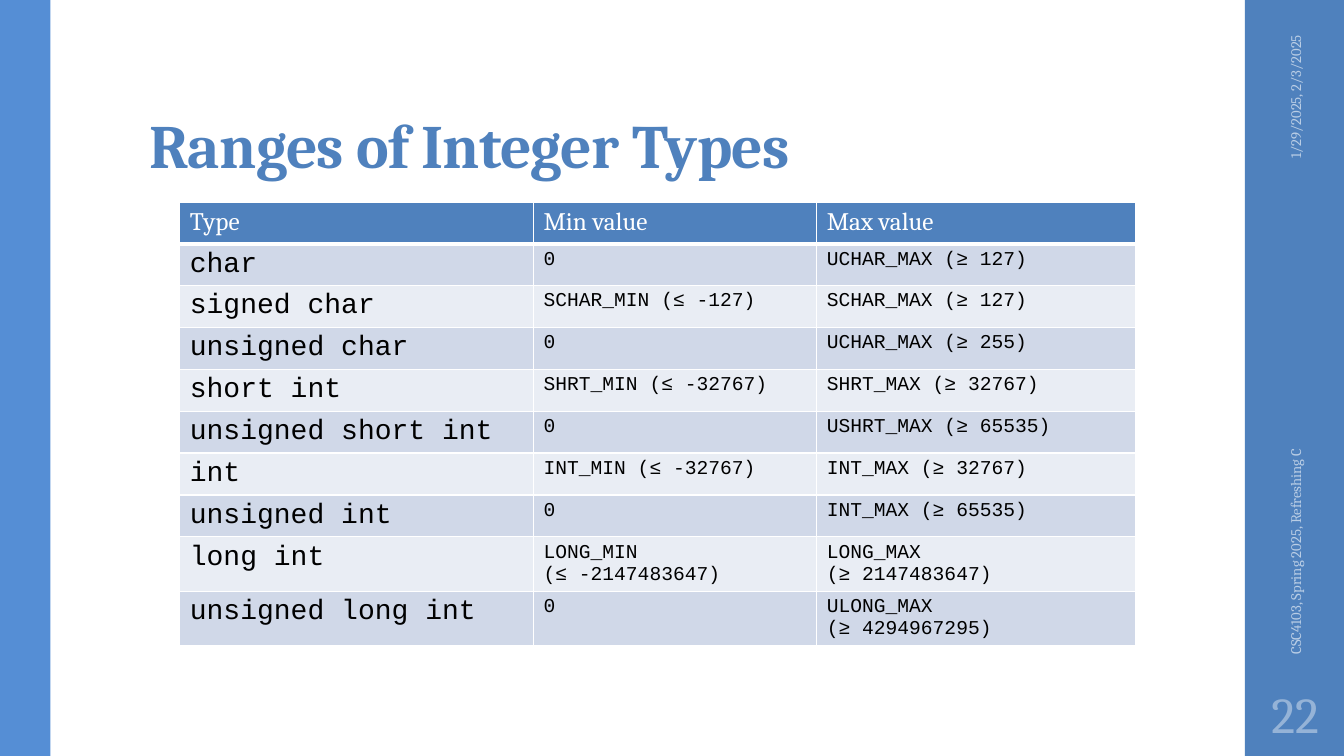
"""Build the slide on the ranges of C integer types."""
from dataclasses import dataclass

from lxml.etree import SubElement
from pptx import Presentation
from pptx.dml.color import RGBColor as RGB
from pptx.enum.shapes import MSO_SHAPE as SHAPE
from pptx.enum.text import MSO_ANCHOR as ANCHOR, MSO_AUTO_SIZE as AUTO, PP_ALIGN as ALIGN
from pptx.oxml import parse_xml
from pptx.oxml.ns import nsdecls, qn
from pptx.util import Pt

COLORS = {
    "accent": "4F81BD", "left_bar": "558ED5", "white": "FFFFFF", "black": "000000",
    "band_dark": "D0D8E8", "band_light": "E9EDF4", "footer": "B9CDE5", "number": "95B3D7",
}
FORMATS = {
    "title": {"name": "Cambria", "size": Pt(44), "bold": True},
    "header": {"name": "Cambria", "size": Pt(18), "bold": False},
    "type": {"name": "Courier New", "size": Pt(20), "bold": False},
    "value": {"name": "Courier New", "size": Pt(14), "bold": False},
    "footer": {"name": "Cambria", "size": Pt(10.5)},
    "number": {"name": "Cambria", "size": Pt(36)},
}
COL_WIDTHS = (252.7, 202.3, 227.8)
ROW_HEIGHT = 29.2
ROWS = (
    ("Type", "Min value", "Max value"),
    ("char", "0", "UCHAR_MAX (≥ 127)"),
    ("signed char", "SCHAR_MIN (≤ -127)", "SCHAR_MAX (≥ 127)"),
    ("unsigned char", "0", "UCHAR_MAX (≥ 255)"),
    ("short int", "SHRT_MIN (≤ -32767)", "SHRT_MAX (≥ 32767)"),
    ("unsigned short int", "0", "USHRT_MAX (≥ 65535)"),
    ("int", "INT_MIN (≤ -32767)", "INT_MAX (≥ 32767)"),
    ("unsigned int", "0", "INT_MAX (≥ 65535)"),
    ("long int", "LONG_MIN\n(≤ -2147483647)", "LONG_MAX\n(≥ 2147483647)"),
    ("unsigned long int", "0", "ULONG_MAX\n(≥ 4294967295)"),
)


@dataclass(frozen=True)
class Bar:
    left: float
    width: float
    color: str


@dataclass(frozen=True)
class Label:
    text: str
    box: tuple[float, float, float, float]
    style: str
    align: ALIGN
    rotation: float = 0
    inset: float = 7.2


BARS = (Bar(889.2, 72, "accent"), Bar(0, 36, "left_bar"))
LABELS = (
    Label("CSC4103, Spring 2025, Refreshing C", (784.1, 319, 282.2, 28.8), "footer", ALIGN.LEFT, 270),
    Label("22", (889.2, 486, 72, 46.8), "number", ALIGN.CENTER, inset=3.6),
    Label("1/29/2025, 2/3/2025", (850.3, 78.5, 149.8, 28.8), "footer", ALIGN.RIGHT, 270),
)


def color(name: str) -> RGB:
    return RGB.from_string(COLORS[name])


def write(tf, text: str, style: str, ink: str, align: ALIGN = ALIGN.LEFT) -> None:
    tf.text = text
    for p in tf.paragraphs:
        p.alignment = align
        for r in p.runs:
            for key, value in FORMATS[style].items():
                setattr(r.font, key, value)
            r.font.color.rgb = color(ink)


def add_bar(s, bar: Bar) -> None:
    sp = s.shapes.add_shape(SHAPE.RECTANGLE, Pt(bar.left), 0, Pt(bar.width), Pt(540))
    sp.shadow.inherit = False
    sp.fill.solid()
    sp.fill.fore_color.rgb = color(bar.color)
    sp.line.fill.background()


def add_title(s, text: str) -> None:
    sp = s.shapes.title
    place = {"left": Pt(99.4), "top": Pt(23), "width": Pt(763.2), "height": Pt(110.2)}
    for key, value in place.items():
        setattr(sp, key, value)
    tf = sp.text_frame
    frame = {"vertical_anchor": ANCHOR.BOTTOM, "auto_size": AUTO.NONE, "word_wrap": True,
             "margin_left": Pt(7.2), "margin_right": Pt(7.2),
             "margin_top": Pt(2.2), "margin_bottom": Pt(3.6)}
    for key, value in frame.items():
        setattr(tf, key, value)
    write(tf, text, "title", "accent")
    p = tf.paragraphs[0]
    p.line_spacing = 0.9
    p.runs[0].font._element.set("spc", "-50")


def add_label(s, label: Label) -> None:
    sp = s.shapes.add_textbox(*map(Pt, label.box))
    sp.rotation = label.rotation
    tf = sp.text_frame
    frame = {"word_wrap": True, "vertical_anchor": ANCHOR.MIDDLE,
             "margin_left": Pt(label.inset), "margin_right": Pt(label.inset)}
    for key, value in frame.items():
        setattr(tf, key, value)
    write(tf, label.text, label.style, label.style, label.align)


def set_borders(cell, widths: dict[str, float]) -> None:
    tc_pr = cell._tc.get_or_add_tcPr()
    for i, (side, width) in enumerate(widths.items()):
        ln = parse_xml(f'<a:ln{side} {nsdecls("a")} w="{Pt(width)}"/>')
        fill = SubElement(ln, qn("a:solidFill"))
        SubElement(fill, qn("a:srgbClr"), val=COLORS["white"])
        tc_pr.insert(i, ln)


def add_ranges(s) -> None:
    frame = s.shapes.add_table(len(ROWS), len(COL_WIDTHS), Pt(128.4), Pt(144.9),
                               Pt(sum(COL_WIDTHS)), Pt(ROW_HEIGHT * len(ROWS)))
    table = frame.table
    for col, width in zip(table.columns, COL_WIDTHS):
        col.width = Pt(width)
    for i, (row, texts) in enumerate(zip(table.rows, ROWS)):
        row.height = Pt(ROW_HEIGHT)
        band = "accent" if i == 0 else "band_dark" if i % 2 else "band_light"
        for j, (cell, text) in enumerate(zip(row.cells, texts)):
            style = "header" if i == 0 else "value" if j else "type"
            write(cell.text_frame, text, style, "black" if i else "white")
            cell.fill.solid()
            cell.fill.fore_color.rgb = color(band)
            set_borders(cell, {"L": 1, "R": 1, "T": 1, "B": 1 if i else 3})


def main() -> None:
    prs = Presentation()
    prs.slide_width, prs.slide_height = Pt(960), Pt(540)
    s = prs.slides.add_slide(prs.slide_layouts[5])
    for bar in BARS:
        add_bar(s, bar)
    add_title(s, "Ranges of Integer Types")
    add_ranges(s)
    for label in LABELS:
        add_label(s, label)
    prs.save("out.pptx")


if __name__ == "__main__":
    main()
